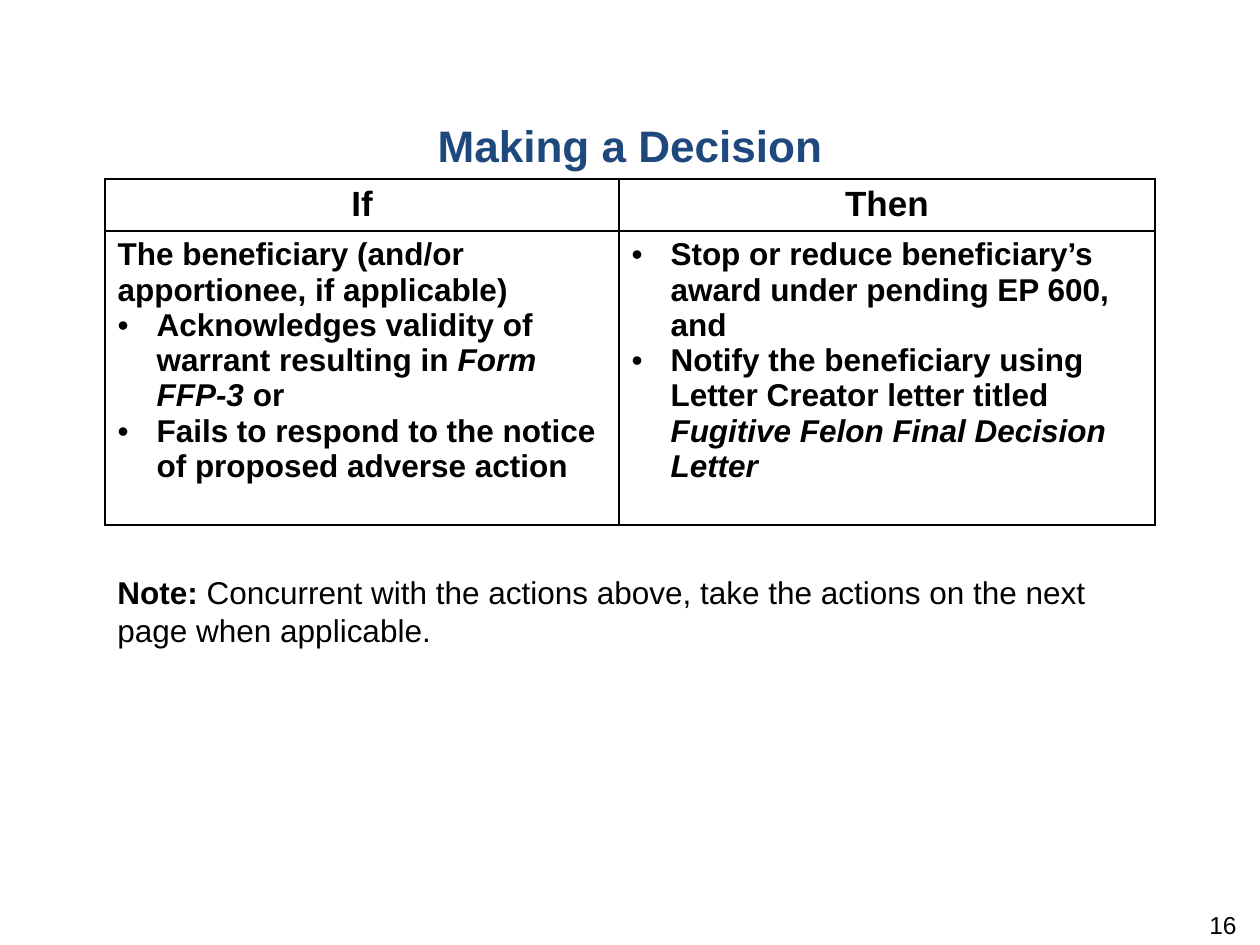
from lxml import etree
from pptx import Presentation
from pptx.dml.color import RGBColor
from pptx.enum.text import MSO_ANCHOR, PP_ALIGN
from pptx.oxml.ns import qn
from pptx.util import Pt

CENTER, LEFT, RIGHT = PP_ALIGN.CENTER, PP_ALIGN.LEFT, PP_ALIGN.RIGHT
TOP, MIDDLE = MSO_ANCHOR.TOP, MSO_ANCHOR.MIDDLE
TITLE_ONLY = 5
FONT = "Arial"
BLACK, WHITE, NAVY = "000000", "FFFFFF", "1F497D"
BULLET_INDENT = 39

HEADINGS = ["If", "Then"]
# Each paragraph: (bulleted, [(text, italic), ...])
CONDITIONS = [
    (False, [("The beneficiary (and/or apportionee, if applicable)", False)]),
    (True, [("Acknowledges validity of warrant resulting in ", False),
            ("Form FFP-3", True), (" or", False)]),
    (True, [("Fails to respond to the notice of proposed adverse action", False)]),
]
ACTIONS = [
    (True, [("Stop or reduce beneficiary’s award under pending EP 600, and", False)]),
    (True, [("Notify the beneficiary using Letter Creator letter titled ", False),
            ("Fugitive Felon Final Decision Letter", True)]),
]


def px(length):
    return round(length * 914400 / 126)


def rgb(value):
    return RGBColor.from_string(value)


def style(paragraph, size, color=BLACK, bold=None, align=LEFT):
    paragraph.alignment = align
    font = paragraph.font
    font.name, font.size, font.bold = FONT, Pt(size), bold
    font.color.rgb = rgb(color)


def add_bullet(paragraph):
    properties = paragraph._p.get_or_add_pPr()
    properties.set("marL", str(px(BULLET_INDENT)))
    properties.set("indent", str(-px(BULLET_INDENT)))
    etree.SubElement(properties, qn("a:buFont")).set("typeface", FONT)
    etree.SubElement(properties, qn("a:buChar")).set("char", "•")


def add_borders(cell):
    properties = cell._tc.get_or_add_tcPr()
    for position, side in enumerate(("lnL", "lnR", "lnT", "lnB")):
        line = etree.Element(qn(f"a:{side}"), w=str(Pt(1)))
        fill = etree.SubElement(line, qn("a:solidFill"))
        etree.SubElement(fill, qn("a:srgbClr")).set("val", BLACK)
        properties.insert(position, line)


def fill_cell(cell, paragraphs, size, align):
    cell.fill.solid()
    cell.fill.fore_color.rgb = rgb(WHITE)
    add_borders(cell)
    frame = cell.text_frame
    for index, (bulleted, runs) in enumerate(paragraphs):
        paragraph = frame.add_paragraph() if index else frame.paragraphs[0]
        if bulleted:
            add_bullet(paragraph)
        style(paragraph, size, bold=True, align=align)
        for text, italic in runs:
            run = paragraph.add_run()
            run.text = text
            run.font.italic = italic


def place_title(slide, left, top, width, height):
    title = slide.shapes.title
    title.left, title.top, title.width, title.height = map(px, (left, top, width, height))
    frame = title.text_frame
    frame.text = "Making a Decision"
    frame.vertical_anchor = MIDDLE
    style(frame.paragraphs[0], 25.2, NAVY, True, CENTER)


def add_decision_table(slide, left, top, columns, rows):
    table = slide.shapes.add_table(
        len(rows), len(columns), px(left), px(top), px(sum(columns)), px(sum(rows))).table
    for column, width in zip(table.columns, columns):
        column.width = px(width)
    for row, height in zip(table.rows, rows):
        row.height = px(height)
    for index, (heading, details) in enumerate(zip(HEADINGS, (CONDITIONS, ACTIONS))):
        fill_cell(table.cell(0, index), [(False, [(heading, False)])], 20, CENTER)
        fill_cell(table.cell(1, index), details, 18, LEFT)


def add_text_frame(slide, left, top, width, height):
    frame = slide.shapes.add_textbox(*map(px, (left, top, width, height))).text_frame
    frame.word_wrap = True
    frame.vertical_anchor = TOP
    return frame


def add_note(slide, left, top, width, height):
    paragraph = add_text_frame(slide, left, top, width, height).paragraphs[0]
    style(paragraph, 18)
    label = paragraph.add_run()
    label.text = "Note:"
    label.font.bold = True
    paragraph.add_run().text = " Concurrent with the actions above, take the actions on the next page when applicable."


def add_page_number(slide, left, top, width, height):
    frame = add_text_frame(slide, left, top, width, height)
    frame.margin_top = 0
    frame.text = "16"
    style(frame.paragraphs[0], 14, align=RIGHT)


def main():
    presentation = Presentation()
    presentation.slide_width, presentation.slide_height = px(1260), px(945)
    slide = presentation.slides.add_slide(presentation.slide_layouts[TITLE_ONLY])

    # Heading
    place_title(slide, 0, 110, 1260, 69)
    # Conditions and the actions they call for
    add_decision_table(slide, 105, 179, columns=(514, 536), rows=(52, 294))
    # Note and page number
    add_note(slide, 105, 567, 1050, 89)
    add_page_number(slide, 955, 910, 294, 50)

    presentation.save("out.pptx")


if __name__ == "__main__":
    main()
